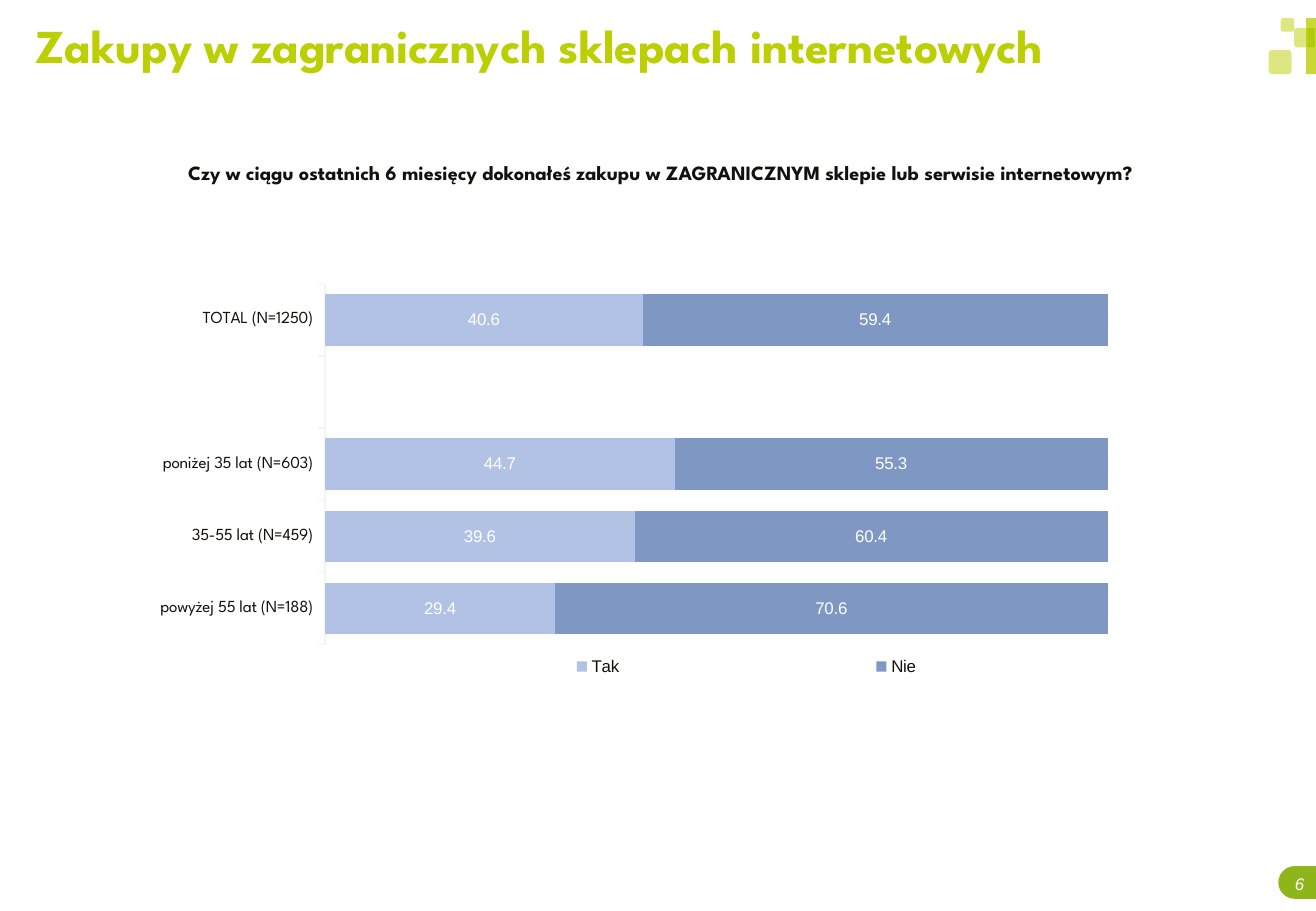
from lxml import etree
from pptx import Presentation
from pptx.chart.data import CategoryChartData
from pptx.dml.color import RGBColor
from pptx.enum.chart import (XL_CHART_TYPE, XL_LABEL_POSITION, XL_LEGEND_POSITION,
                             XL_TICK_LABEL_POSITION, XL_TICK_MARK)
from pptx.enum.shapes import MSO_SHAPE
from pptx.enum.text import MSO_ANCHOR, MSO_AUTO_SIZE, PP_ALIGN
from pptx.oxml.ns import qn
from pptx.util import Inches, Pt

STACKED_BARS = XL_CHART_TYPE.BAR_STACKED_100
LABEL_CENTER = XL_LABEL_POSITION.CENTER
LEGEND_BOTTOM = XL_LEGEND_POSITION.BOTTOM
NO_LABELS = XL_TICK_LABEL_POSITION.NONE
TICK_NONE, TICK_OUT = XL_TICK_MARK.NONE, XL_TICK_MARK.OUTSIDE
RECT, ROUNDED, TAB = (MSO_SHAPE.RECTANGLE, MSO_SHAPE.ROUNDED_RECTANGLE,
                      MSO_SHAPE.ROUND_2_SAME_RECTANGLE)
TOP, NO_FIT = MSO_ANCHOR.TOP, MSO_AUTO_SIZE.NONE
LEFT, CENTER = PP_ALIGN.LEFT, PP_ALIGN.CENTER

SLIDE_WIDTH, SLIDE_HEIGHT = Inches(10.83), Inches(7.5)
HEADING_FONT, BODY_FONT = "League Spartan", "Arial"
COLORS = {"lime": "BCCF03", "green": "7CBB26", "badge": "8EB519", "ink": "13100D",
          "white": "FFFFFF", "axis": "F0F7EC", "yes": "B1C2E5", "no": "7F97C3"}

AGE_GROUPS = ["TOTAL (N=1250)", "", "poniżej 35 lat (N=603)",
              "35-55 lat (N=459)", "powyżej 55 lat (N=188)"]
ANSWERS = [("Tak", "yes", [40.6, None, 44.7, 39.6, 29.4]),
           ("Nie", "no", [59.4, None, 55.3, 60.4, 70.6])]
CORNER_MOTIF = [(ROUNDED, (96.4, 5.47, 1.75, 2.67), "lime", 50, 0),
                (ROUNDED, (98.34, 3.07, 1.39, 2.13), "lime", 50, 0),
                (ROUNDED, (97.32, 2, 1.02, 1.47), "lime", 50, 0),
                (TAB, (98.89, 3.73, 1.48, 0.8), "green", 100, 90),
                (RECT, (99.26, 2, 0.74, 6.13), "lime", 80, 0)]


def color(name):
    return RGBColor.from_string(COLORS[name])


def percent_box(left, top, width, height):
    return (int(SLIDE_WIDTH * left / 100), int(SLIDE_HEIGHT * top / 100),
            int(SLIDE_WIDTH * width / 100), int(SLIDE_HEIGHT * height / 100))


def style_font(font, size, color_name, family=BODY_FONT, bold=False, italic=False):
    font.size, font.name, font.bold, font.italic = Pt(size), family, bold, italic
    font.color.rgb = color(color_name)


def write_line(frame, text, align, insets, wrap, **style):
    frame.margin_left = frame.margin_right = Inches(insets[0])
    frame.margin_top = frame.margin_bottom = Inches(insets[1])
    frame.word_wrap, frame.auto_size, frame.vertical_anchor = wrap, NO_FIT, TOP
    line = frame.paragraphs[0]
    line.alignment = align
    run = line.add_run()
    run.text = text
    style_font(run.font, **style)


def add_block(slide, kind, box, color_name, opacity=100, rotation=0):
    block = slide.shapes.add_shape(kind, *percent_box(*box))
    block.shadow.inherit = False
    block.rotation = rotation
    block.fill.solid()
    block.fill.fore_color.rgb = color(color_name)
    block.line.fill.background()
    if opacity < 100:
        tint = block.fill._xPr.find(qn("a:solidFill"))[0]
        etree.SubElement(tint, qn("a:alpha")).set("val", str(opacity * 1000))


def add_title(slide, text):
    title = slide.shapes.title
    title.left, title.top, title.width, title.height = percent_box(2.68, 1.07, 92.7, 11.33)
    write_line(title.text_frame, text, LEFT, (0, 0.05), True,
               size=28, color_name="lime", family=HEADING_FONT, bold=True)


def add_text(slide, box, text, insets, wrap, **style):
    label = slide.shapes.add_textbox(*percent_box(*box))
    write_line(label.text_frame, text, CENTER, insets, wrap, **style)


def manual_layout(x, y, w, h, inner=False):
    layout = etree.Element(qn("c:layout"))
    manual = etree.SubElement(layout, qn("c:manualLayout"))
    settings = [("layoutTarget", "inner")] if inner else []
    settings += [("xMode", "edge"), ("yMode", "edge"),
                 ("x", x), ("y", y), ("w", w), ("h", h)]
    for tag, value in settings:
        etree.SubElement(manual, qn("c:" + tag)).set("val", str(value))
    return layout


def place_plot(chart):
    plot_area = chart._chartSpace.chart.plotArea
    for layout in plot_area.findall(qn("c:layout")):
        plot_area.remove(layout)
    plot_area.insert(0, manual_layout(0.16, 0, 0.78, 0.75, inner=True))


def add_legend(chart):
    chart.has_legend = True
    legend = chart.legend
    legend.position, legend.include_in_layout = LEGEND_BOTTOM, False
    style_font(legend.font, 10, "ink")
    element = legend._element
    for layout in element.findall(qn("c:layout")):
        element.remove(layout)
    element.find(qn("c:legendPos")).addnext(manual_layout(0.16, 0.76, 0.84, 0.07))


def style_axes(chart):
    groups, shares = chart.category_axis, chart.value_axis
    groups.reverse_order = True
    groups.has_major_gridlines = shares.has_major_gridlines = False
    groups.major_tick_mark, groups.minor_tick_mark = TICK_OUT, TICK_NONE
    groups.format.line.color.rgb = color("axis")
    groups.format.line.width = Pt(0.75)
    style_font(groups.tick_labels.font, 10, "ink", HEADING_FONT)
    shares.minimum_scale = 0
    shares.major_tick_mark = shares.minor_tick_mark = TICK_NONE
    shares.tick_label_position = NO_LABELS
    shares.format.line.fill.background()


def add_answer_chart(slide):
    data = CategoryChartData(number_format="0.0")
    data.categories = AGE_GROUPS
    for answer, _, values in ANSWERS:
        data.add_series(answer, values)
    chart = slide.shapes.add_chart(STACKED_BARS, *percent_box(12.19, 31.07, 76.55, 52.93),
                                   data).chart
    chart.has_title = False
    style_font(chart.font, 10, "ink")
    bars = chart.plots[0]
    bars.gap_width, bars.overlap, bars.vary_by_categories = 40, 100, False
    for series, (_, color_name, _) in zip(bars.series, ANSWERS):
        series.format.fill.solid()
        series.format.fill.fore_color.rgb = color(color_name)
        labels = series.data_labels
        labels.show_value, labels.position = True, LABEL_CENTER
        labels.number_format, labels.number_format_is_linked = "0.0", False
        style_font(labels.font, 10, "white")
    style_axes(chart)
    place_plot(chart)
    add_legend(chart)


def main():
    deck = Presentation()
    deck.slide_width, deck.slide_height = SLIDE_WIDTH, SLIDE_HEIGHT
    slide = deck.slides.add_slide(deck.slide_layouts[5])
    add_block(slide, TAB, (97.32, 94.8, 2.49, 4.13), "badge", rotation=270)
    slide.shapes[-1].adjustments[0] = 0.5
    add_text(slide, (97.97, 95.87, 1.57, 2.27), "6", (0, 0), False,
             size=10, color_name="white", italic=True)
    for block in CORNER_MOTIF:
        add_block(slide, *block)
    add_title(slide, "Zakupy w zagranicznych sklepach internetowych")
    add_answer_chart(slide)
    add_text(slide, (6.46, 16.93, 87.53, 4),
             "Czy w ciągu ostatnich 6 miesięcy dokonałeś zakupu w ZAGRANICZNYM "
             "sklepie lub serwisie internetowym?", (0.1, 0.05), True,
             size=12, color_name="ink", family=HEADING_FONT, bold=True)
    deck.save("out.pptx")


if __name__ == "__main__":
    main()
